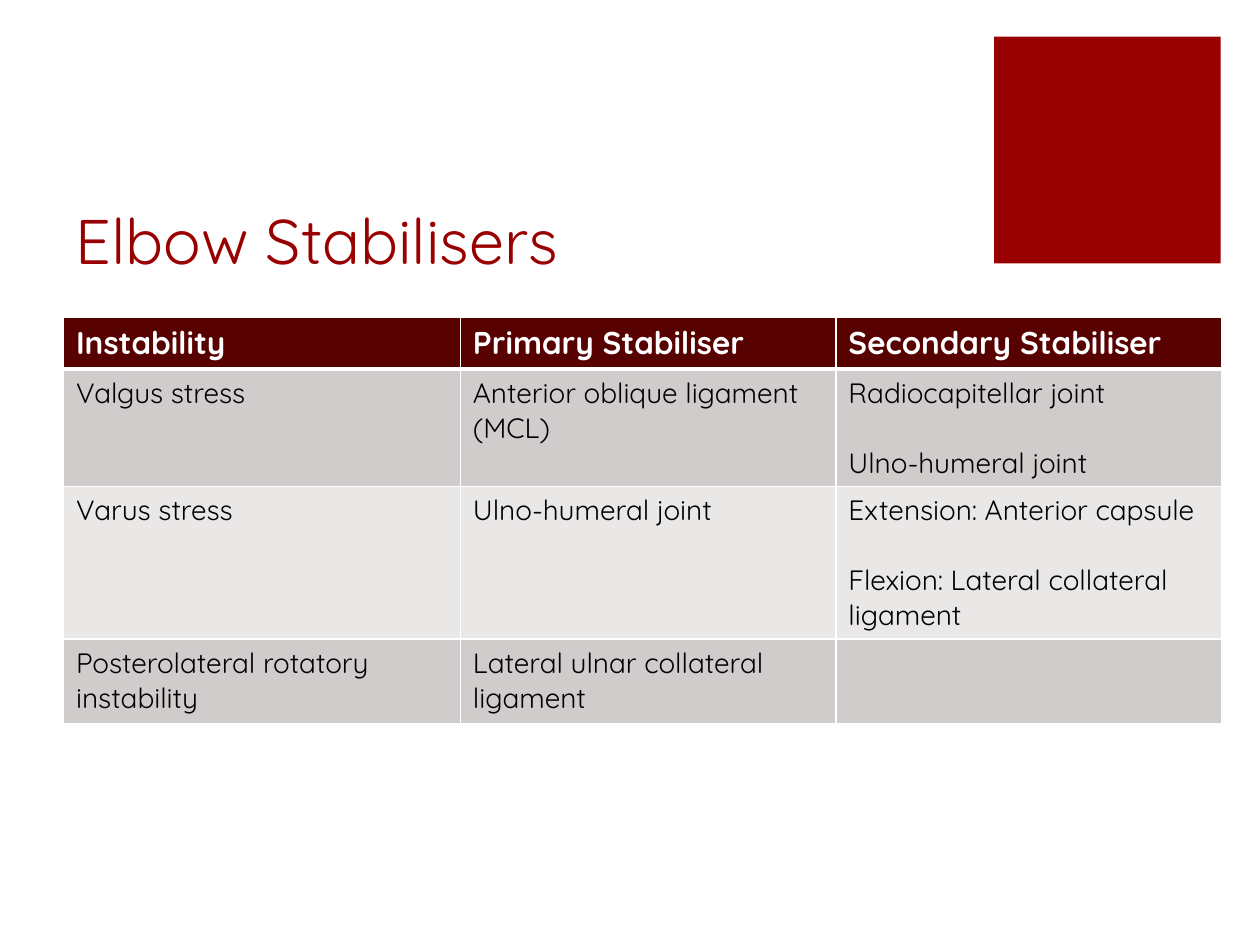
"""Build the elbow stabilisers slide with its instability table."""
from dataclasses import dataclass

from lxml import etree
from pptx import Presentation
from pptx.dml.color import RGBColor
from pptx.enum.shapes import MSO_SHAPE
from pptx.enum.text import MSO_ANCHOR, PP_ALIGN
from pptx.oxml.ns import qn
from pptx.util import Cm, Pt

RECTANGLE = MSO_SHAPE.RECTANGLE
BOTTOM = MSO_ANCHOR.BOTTOM
LEFT = PP_ALIGN.LEFT

FONT = "Quicksand"
COLORS = {
    "accent": "990000",
    "header": "580101",
    "band_dark": "D1CCCC",
    "band_light": "EAE7E7",
    "white": "FFFFFF",
    "black": "000000",
}
COLUMN_WIDTHS = (8.0, 7.57, 7.77)


@dataclass
class Row:
    height: float
    fill: str
    cells: tuple[str, str, str]
    color: str = "black"
    size: int = 16
    bold: bool = False
    bottom_border: int = 1


ROWS = (
    Row(1.03, "header", ("Instability", "Primary Stabiliser", "Secondary Stabiliser"),
        color="white", size=18, bold=True, bottom_border=3),
    Row(2.37, "band_dark", ("Valgus stress", "Anterior oblique ligament (MCL)",
                            "Radiocapitellar joint\nUlno-humeral joint")),
    Row(3.07, "band_light", ("Varus stress", "Ulno-humeral joint",
                             "Extension: Anterior capsule\n"
                             "Flexion: Lateral collateral ligament")),
    Row(1.7, "band_dark", ("Posterolateral rotatory instability",
                           "Lateral ulnar collateral ligament", "")),
)


def rgb(name: str) -> RGBColor:
    return RGBColor.from_string(COLORS[name])


def format_text(tf, size: int, color: str, bold: bool = False) -> None:
    for p in tf.paragraphs:
        p.alignment = LEFT
        for r in p.runs:
            r.font.name = FONT
            r.font.size = Pt(size)
            r.font.bold = bold
            r.font.color.rgb = rgb(color)


def add_border(cell, side: str, width: int) -> None:
    tc_pr = cell._tc.get_or_add_tcPr()
    ln = etree.SubElement(tc_pr, qn(f"a:ln{side}"), w=str(Pt(width)))
    fill = etree.SubElement(ln, qn("a:solidFill"))
    etree.SubElement(fill, qn("a:srgbClr"), val=COLORS["white"])


def fill_cell(cell, text: str, row: Row, top_border: int) -> None:
    widths = {"L": 1, "R": 1, "T": top_border, "B": row.bottom_border}
    for side, width in widths.items():
        add_border(cell, side, width)
    cell.fill.solid()
    cell.fill.fore_color.rgb = rgb(row.fill)
    tf = cell.text_frame
    tf.text = text
    format_text(tf, row.size, row.color, row.bold)
    for p in tf.paragraphs[1:]:
        p.space_before = Pt(20)


def add_stabiliser_table(s) -> None:
    height = sum(row.height for row in ROWS)
    table = s.shapes.add_table(len(ROWS), len(COLUMN_WIDTHS), Cm(1.28), Cm(6.39),
                               Cm(sum(COLUMN_WIDTHS)), Cm(height)).table
    for column, width in zip(table.columns, COLUMN_WIDTHS):
        column.width = Cm(width)
    top_border = 1
    for i, row in enumerate(ROWS):
        table.rows[i].height = Cm(row.height)
        for j, text in enumerate(row.cells):
            fill_cell(table.cell(i, j), text, row, top_border)
        top_border = row.bottom_border


def add_accent_square(s) -> None:
    sp = s.shapes.add_shape(RECTANGLE, Cm(20.04), Cm(0.74), Cm(4.57), Cm(4.57))
    sp.shadow.inherit = False
    sp.fill.solid()
    sp.fill.fore_color.rgb = rgb("accent")
    sp.line.fill.background()


def set_title(s, text: str) -> None:
    sp = s.shapes.title
    sp.left, sp.top, sp.width, sp.height = Cm(1.27), Cm(2.54), Cm(18.08), Cm(3.18)
    tf = sp.text_frame
    tf.text = text
    tf.vertical_anchor = BOTTOM
    format_text(tf, 36, "accent")


def main() -> None:
    prs = Presentation()
    prs.slide_width, prs.slide_height = Cm(25.4), Cm(19.05)
    s = prs.slides.add_slide(prs.slide_layouts[5])
    add_accent_square(s)
    set_title(s, "Elbow Stabilisers")
    add_stabiliser_table(s)
    prs.save("out.pptx")


if __name__ == "__main__":
    main()
